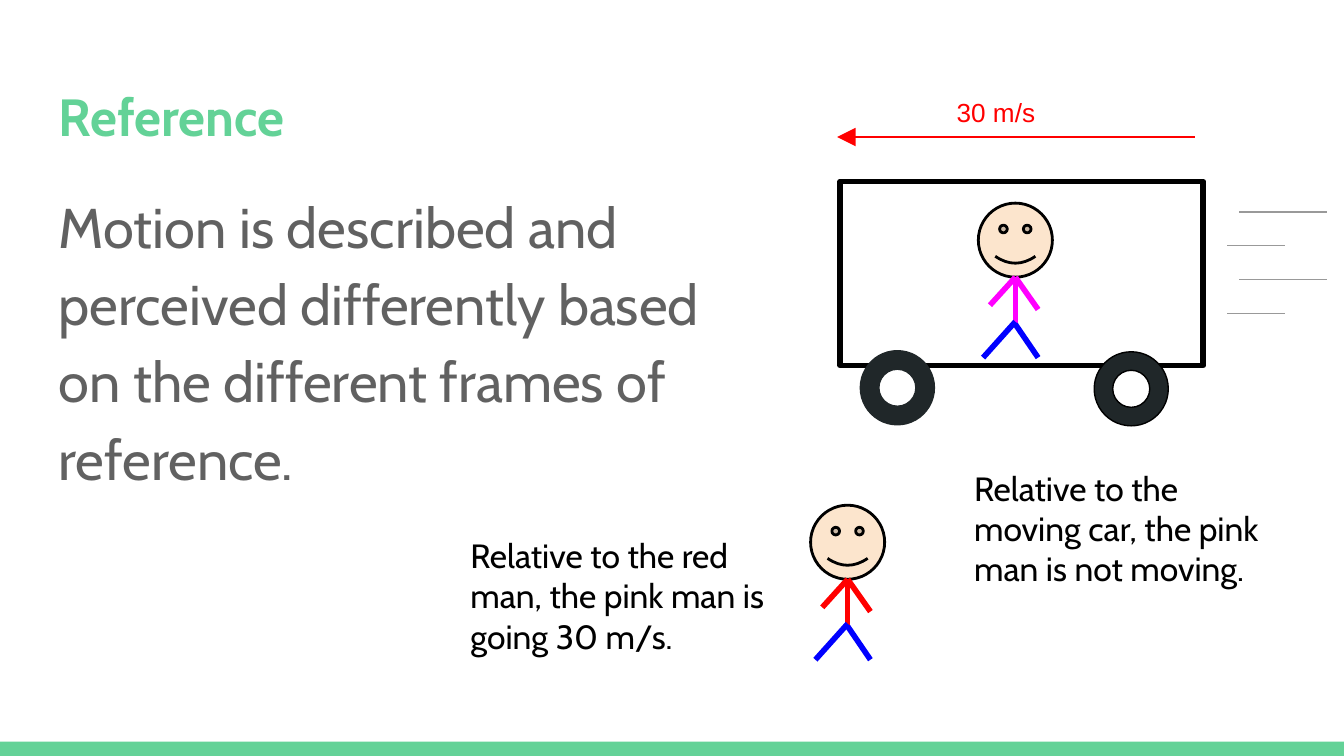
import dataclasses

import lxml.etree
import pptx
import pptx.dml.color
import pptx.enum.shapes
import pptx.oxml.ns
import pptx.util

Cm = pptx.util.Cm
Pt = pptx.util.Pt
KIND = pptx.enum.shapes.MSO_SHAPE


@dataclasses.dataclass(frozen=True)
class Theme:
    """Colours, fonts and type sizes of the slide."""
    green: str = "63D297"
    grey: str = "616161"
    pale: str = "999999"
    black: str = "000000"
    red: str = "FF0000"
    pink: str = "FF00FF"
    blue: str = "0000FF"
    skin: str = "FCE5CD"
    tyre: str = "202729"
    main: str = "Cabin"
    plain: str = "Arial"
    title: int = 28
    body: int = 30
    note: int = 18
    label: int = 14


THEME = Theme()


def tint(name):
    """Turn a hex string into a colour."""
    return pptx.dml.color.RGBColor.from_string(name)


def add_text(slide, box, text, size, color, font=THEME.main, bold=False):
    """Put one paragraph into the box and return it."""
    frame = slide.shapes.add_textbox(*map(Cm, box)).text_frame
    frame.word_wrap = True
    frame.margin_left = frame.margin_right = Cm(0.25)
    frame.margin_top = frame.margin_bottom = Cm(0.25)
    frame.text = text
    para = frame.paragraphs[0]
    face = para.runs[0].font
    face.name, face.size, face.bold = font, Pt(size), bold
    face.color.rgb = tint(color)
    return para


def add_form(slide, kind, box, fill=None, line=None, width=0.75):
    """Draw a preset shape in the box."""
    form = slide.shapes.add_shape(kind, *map(Cm, box))
    form.shadow.inherit = False
    if fill:
        form.fill.solid()
        form.fill.fore_color.rgb = tint(fill)
    else:
        form.fill.background()
    if line:
        form.line.color.rgb = tint(line)
        form.line.width = Pt(width)
    else:
        form.line.fill.background()


def add_line(slide, start, end, color, width=0.75, arrow=False):
    """Draw a straight line, with a large arrowhead at its end if asked."""
    line = slide.shapes.add_connector(
        pptx.enum.shapes.MSO_CONNECTOR.STRAIGHT, *map(Cm, (*start, *end)))
    line.line.color.rgb = tint(color)
    line.line.width = Pt(width)
    props = line._element.spPr
    name = pptx.oxml.ns.qn
    lxml.etree.SubElement(props, name("a:effectLst"))
    if arrow:
        lxml.etree.SubElement(props.find(name("a:ln")), name("a:tailEnd"),
                              type="triangle", w="lg", len="lg")


def add_copy(slide, box):
    """Write the title and the main statement down the box."""
    left, top, width, height = box
    add_text(slide, (left, top, width, 1.6), "Reference",
             THEME.title, THEME.green, bold=True)
    para = add_text(
        slide, (left, top + 1.85, width, height - 1.85),
        "Motion is described and perceived differently based on the "
        "different frames of reference.", THEME.body, THEME.grey)
    para.line_spacing = 1.15
    para.space_after = Pt(16)


def add_car(slide, box):
    """Draw the car body with two wheels on its lower edge."""
    left, top, width, height = box
    add_form(slide, KIND.RECTANGLE, box, line=THEME.black, width=3)
    size = 1.4
    for shift, drop, edge in ((0.38, 3.2, THEME.tyre),
                              (4.8, 3.22, THEME.black)):
        add_form(slide, KIND.DONUT, (left + shift, top + drop, size, size),
                 THEME.tyre, edge)


def add_speed(slide, box):
    """Draw the velocity arrow with its label."""
    left, top, width, height = box
    base = top + height
    add_line(slide, (left + width, base), (left, base), THEME.red, arrow=True)
    add_text(slide, (left + 2.01, top, 3.48, 0.51), "30 m/s",
             THEME.label, THEME.red, THEME.plain)


def add_trail(slide, box):
    """Draw four alternating motion lines behind the car."""
    left, top, width, height = box
    for row in range(4):
        y = top + row * height / 3
        start, end = (0, 1.09) if row % 2 else (0.23, width)
        add_line(slide, (left + start, y), (left + end, y), THEME.pale)


def add_man(slide, box, shirt):
    """Draw a smiling stick man whose head spans the box width."""
    left, top, width, height = box
    mid, neck, hip, foot = left + width / 2, top + width, top + 2.29, top + height
    add_form(slide, KIND.SMILEY_FACE, (left, top, width, width),
             THEME.skin, THEME.black, 1.5)
    limbs = (
        ((mid, neck), (mid, hip), shirt),
        ((mid, neck), (mid + 0.43, top + 2.01), shirt),
        ((mid, hip), (mid + 0.43, foot), THEME.blue),
        ((mid - 0.48, top + 1.93), (mid, neck), shirt),
        ((mid - 0.61, foot), (mid, hip - 0.05), THEME.blue),
    )
    for start, end, color in limbs:
        add_line(slide, start, end, color, 3)


def add_note(slide, box, text):
    """Write a caption in the box."""
    add_text(slide, box, text, THEME.note, THEME.black)


def main():
    """Build the slide and save it."""
    deck = pptx.Presentation()
    deck.slide_width, deck.slide_height = Cm(25.4), Cm(14.29)
    slide = deck.slides.add_slide(deck.slide_layouts[6])
    add_form(slide, KIND.RECTANGLE, (0, 14.02, 25.4, 0.27), THEME.green)
    add_copy(slide, (0.86, 1.35, 13.84, 11.35))
    add_car(slide, (15.88, 3.43, 6.86, 3.48))
    add_speed(slide, (15.82, 1.57, 6.76, 1.02))
    add_man(slide, (18.49, 3.84, 1.4, 2.92), THEME.pink)
    add_man(slide, (15.32, 9.55, 1.4, 2.92), THEME.red)
    add_note(slide, (8.64, 9.86, 6.32, 2.57),
             "Relative to the red man, the pink man is going 30 m/s.")
    add_note(slide, (18.16, 8.59, 6.32, 2.57),
             "Relative to the moving car, the pink man is not moving.")
    add_trail(slide, (23.19, 4.01, 1.88, 1.91))
    deck.save("out.pptx")


if __name__ == "__main__":
    main()
